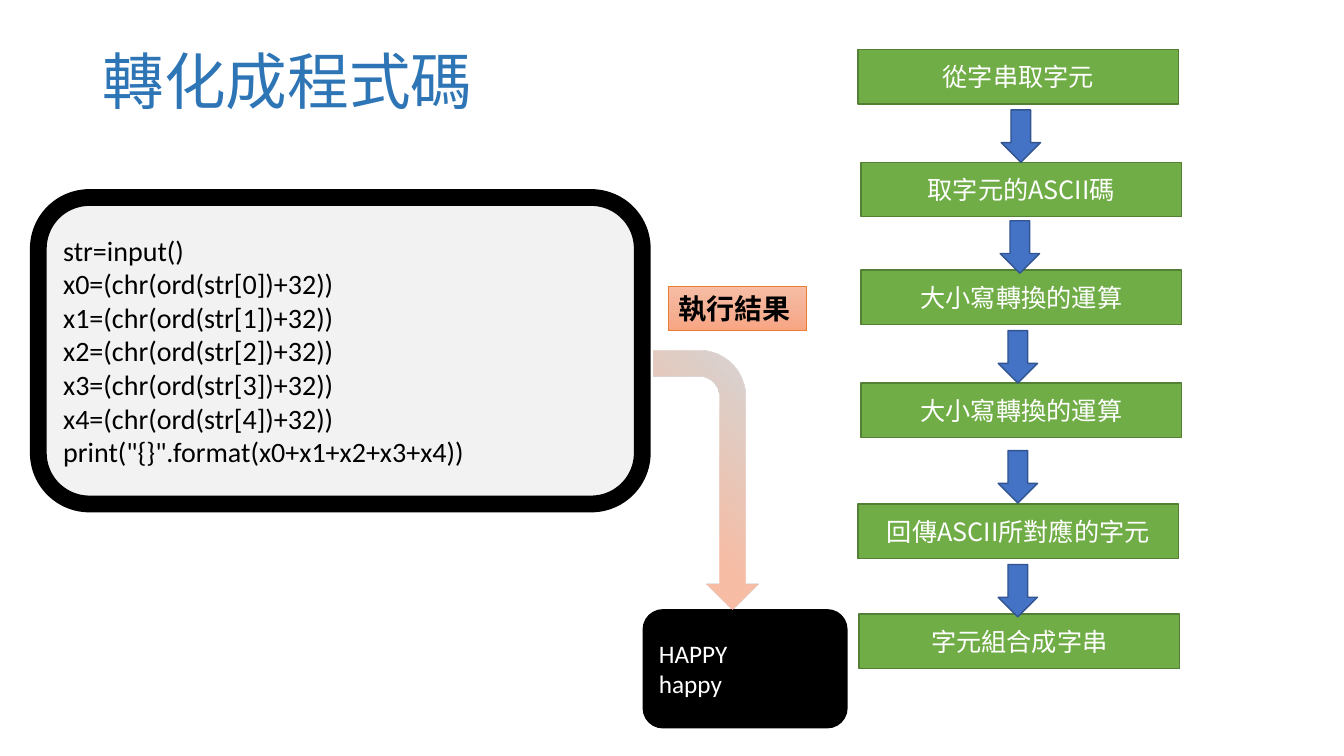
import pptx
import pptx.util
import pptx.dml.color
import pptx.enum.shapes
import pptx.enum.text
import pptx.oxml
import pptx.oxml.ns

SHAPES = pptx.enum.shapes.MSO_SHAPE
ALIGN = pptx.enum.text.PP_ALIGN
ANCHOR = pptx.enum.text.MSO_ANCHOR


def colour(hex_string):
    return pptx.dml.color.RGBColor.from_string(hex_string)


class Board:
    """Slide on a grid whose columns and rows are a tenth of an inch."""
    UNIT = 0.1
    LATIN, HAN, HAN_BOLD = "Calibri", "Noto Sans CJK SC", "Noto Sans CJK JP"

    def __init__(self, deck):
        self.slide = deck.slides.add_slide(deck.slide_layouts[6])

    def place(self, box):
        return [pptx.util.Inches(cells * self.UNIT) for cells in box]

    def add_lines(self, shape, lines, size, font, ink, align=ALIGN.LEFT,
                  anchor=ANCHOR.MIDDLE, bold=False, wrap=True, spacing=None):
        frame = shape.text_frame
        frame.word_wrap = wrap
        frame.vertical_anchor = anchor
        for number, line in enumerate(lines):
            paragraph = frame.add_paragraph() if number else frame.paragraphs[0]
            paragraph.alignment = align
            paragraph.line_spacing = spacing
            run = paragraph.add_run()
            run.text = line
            run.font.size = pptx.util.Pt(size)
            run.font.bold = bold
            run.font.name = font
            run.font.color.rgb = colour(ink)
            if font != self.LATIN:
                east_asian = pptx.oxml.parse_xml(
                    f'<a:ea {pptx.oxml.ns.nsdecls("a")} typeface="{font}"/>')
                run.font._element.find(pptx.oxml.ns.qn("a:latin")).addnext(east_asian)

    def title(self, box, line, size, ink):
        heading = self.slide.shapes.add_textbox(*self.place(box))
        self.add_lines(heading, [line], size, self.HAN, ink,
                       anchor=ANCHOR.TOP, spacing=0.9)

    def block(self, kind, box, fill=None, edge=None, weight=1):
        shape = self.slide.shapes.add_shape(kind, *self.place(box))
        shape.shadow.inherit = False
        if fill:
            shape.fill.solid()
            shape.fill.fore_color.rgb = colour(fill)
        if edge:
            shape.line.color.rgb = colour(edge)
            shape.line.width = pptx.util.Pt(weight)
        else:
            shape.line.fill.background()
        return shape

    def gradient(self, shape, stops, angle):
        """Stops are (position %, colour, opacity %)."""
        marks = "".join(
            f'<a:gs pos="{place * 1000}"><a:srgbClr val="{tint}">'
            f'<a:alpha val="{opacity * 1000}"/></a:srgbClr></a:gs>'
            for place, tint, opacity in stops)
        fill = pptx.oxml.parse_xml(
            f'<a:gradFill {pptx.oxml.ns.nsdecls("a")} rotWithShape="1">'
            f'<a:gsLst>{marks}</a:gsLst>'
            f'<a:lin ang="{angle * 60000}" scaled="0"/></a:gradFill>')
        shape._element.spPr.find(pptx.oxml.ns.qn("a:prstGeom")).addnext(fill)


CODE = [
    "str=input()",
    *[f"x{index}=(chr(ord(str[{index}])+32))" for index in range(5)],
    'print("{}".format(x0+x1+x2+x3+x4))',
]

# Label, then left and top of each step
STEPS = [
    ("從字串取字元", 85.1, 4.9),
    ("取字元的ASCII碼", 85.4, 16.1),
    ("大小寫轉換的運算", 85.4, 26.8),
    ("大小寫轉換的運算", 85.4, 38),
    ("回傳ASCII所對應的字元", 85.1, 50),
    ("字元組合成字串", 85.2, 60.9),
]
STEP_ARROWS = [(99.3, 10.9), (99.2, 21.9), (99, 32.8), (99, 44.7), (99, 56)]


def main():
    deck = pptx.Presentation()
    deck.slide_width = pptx.util.Inches(13.33)
    deck.slide_height = pptx.util.Inches(7.5)
    board = Board(deck)

    # Title and program
    board.title((9.2, 4.6, 47.3, 8.4), "轉化成程式碼", 44, "2E75B6")
    program = board.block(SHAPES.FLOWCHART_ALTERNATE_PROCESS,
                          (3.8, 19.6, 59.9, 30.4), "F2F2F2", "000000", 12)
    board.add_lines(program, CODE, 20, board.LATIN, "000000")

    # Flow of steps
    for label, left, top in STEPS:
        step = board.block(SHAPES.FLOWCHART_PROCESS, (left, top, 31.8, 5.4),
                           "70AD47", "538035")
        board.add_lines(step, [label], 18, board.HAN, "FFFFFF", ALIGN.CENTER)
    for left, top in STEP_ARROWS:
        board.block(SHAPES.DOWN_ARROW, (left, top, 3.9, 5.2), "4472C4", "325491")

    # Output of the program
    console = board.block(SHAPES.ROUNDED_RECTANGLE, (63.8, 60.5, 20.2, 11.7),
                          "000000", "000000")
    board.add_lines(console, ["HAPPY", "happy"], 18, board.LATIN, "FFFFFF")

    result_label = board.block(SHAPES.RECTANGLE, (66.3, 28.4, 13.7, 4.4),
                               edge="ED7D31", weight=0.5)
    board.gradient(result_label, [(0, "F7BDA5", 100), (50, "F5B196", 100),
                                  (100, "F8A582", 100)], 90)
    board.add_lines(result_label, ["執行結果"], 20, board.HAN_BOLD, "000000",
                    anchor=ANCHOR.TOP, bold=True, wrap=False)
    result_label.text_frame.auto_size = pptx.enum.text.MSO_AUTO_SIZE.SHAPE_TO_FIT_TEXT

    result_arrow = board.block(SHAPES.BENT_ARROW, (57.2, 42.4, 25.7, 10.4))
    result_arrow.rotation = 90
    board.gradient(result_arrow, [(0, "D1D1D1", 90), (68, "F7BDA5", 100)], 45)

    deck.save("out.pptx")


if __name__ == "__main__":
    main()
